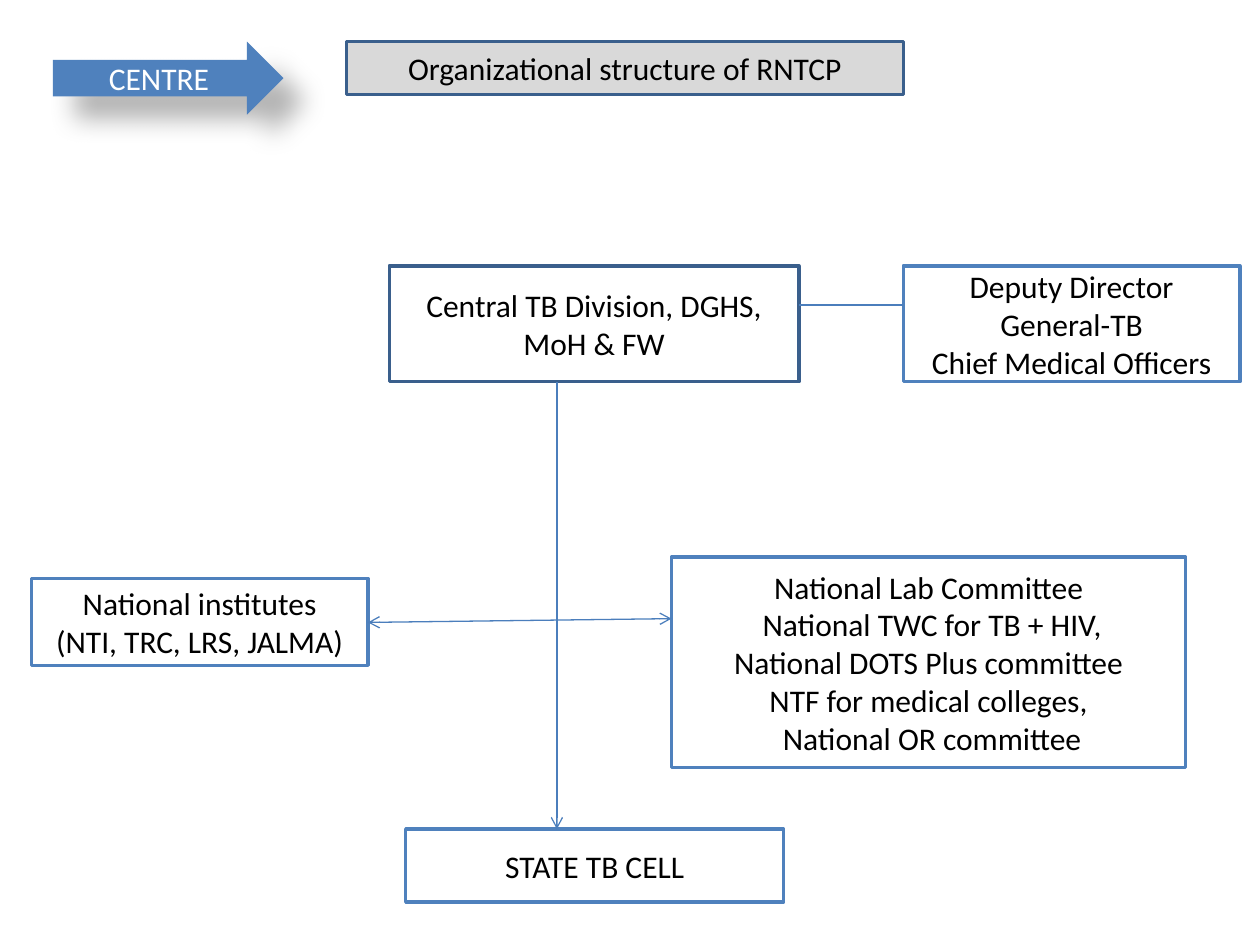
"""Builds the slide on the central organizational structure of RNTCP."""
from lxml import etree
from pptx import Presentation
from pptx.dml.color import RGBColor
from pptx.enum.shapes import MSO_CONNECTOR, MSO_SHAPE
from pptx.enum.text import MSO_ANCHOR, PP_ALIGN
from pptx.oxml import parse_xml
from pptx.oxml.ns import qn
from pptx.util import Inches, Pt

RECTANGLE = MSO_SHAPE.RECTANGLE
RIGHT_ARROW = MSO_SHAPE.RIGHT_ARROW
STRAIGHT = MSO_CONNECTOR.STRAIGHT
MIDDLE = MSO_ANCHOR.MIDDLE
CENTER = PP_ALIGN.CENTER

BLACK = RGBColor(0x00, 0x00, 0x00)
WHITE = RGBColor(0xFF, 0xFF, 0xFF)
GRAY = RGBColor(0xD9, 0xD9, 0xD9)
BLUE = RGBColor(0x4F, 0x81, 0xBD)
DARK_BLUE = RGBColor(0x3A, 0x5F, 0x8C)
LINE_BLUE = RGBColor(0x4B, 0x7E, 0xBC)

SHADOW_XML = (
    '<a:effectLst xmlns:a="http://schemas.openxmlformats.org/drawingml/2006/main">'
    '<a:outerShdw blurRad="190500" dist="228600" dir="2700000" rotWithShape="0">'
    '<a:srgbClr val="000000"><a:alpha val="30000"/></a:srgbClr>'
    '</a:outerShdw></a:effectLst>'
)

presentation = Presentation()
presentation.slide_width = Inches(10)
presentation.slide_height = Inches(7.5)
slide = presentation.slides.add_slide(presentation.slide_layouts[6])


def add_box(text, position, kind=RECTANGLE, fill=None, line=BLUE, color=BLACK):
    shape = slide.shapes.add_shape(kind, *map(Inches, position))
    shape.shadow.inherit = False
    if fill is None:
        shape.fill.background()
    else:
        shape.fill.solid()
        shape.fill.fore_color.rgb = fill
    if line is None:
        shape.line.fill.background()
    else:
        shape.line.color.rgb = line
        shape.line.width = Pt(2)
    frame = shape.text_frame
    frame.word_wrap = True
    frame.vertical_anchor = MIDDLE
    frame.text = text
    for paragraph in frame.paragraphs:
        paragraph.alignment = CENTER
        font = paragraph.runs[0].font
        font.name = "Calibri"
        font.size = Pt(18)
        font.color.rgb = color
    return shape


add_box("Central TB Division, DGHS, MoH & FW", (3.09, 2.11, 3.25, 0.92), line=DARK_BLUE)
add_box("Deputy Director General-TB\nChief Medical Officers", (7.17, 2.11, 2.67, 0.92))
add_box("National institutes\n(NTI, TRC, LRS, JALMA)", (0.25, 4.59, 2.67, 0.69))
add_box(
    "National Lab Committee\n National TWC for TB + HIV,\n"
    " National DOTS Plus committee \nNTF for medical colleges,\n National OR committee",
    (5.33, 4.42, 4.08, 1.67),
)
add_box("Organizational structure of RNTCP", (2.75, 0.33, 4.42, 0.42), fill=GRAY, line=DARK_BLUE)
add_box("STATE TB CELL", (3.22, 6.58, 3, 0.58))

connectors = [
    ((6.34, 2.42, 7.17, 2.42), ()),
    ((2.92, 4.94, 5.33, 4.91), ("a:headEnd", "a:tailEnd")),
    ((4.42, 3.03, 4.42, 6.58), ("a:tailEnd",)),
]
for ends, arrowheads in connectors:
    connector = slide.shapes.add_connector(STRAIGHT, *map(Inches, ends))
    connector.line.color.rgb = LINE_BLUE
    connector.line.width = Pt(0.75)
    properties = connector._element.spPr
    outline = properties.find(qn("a:ln"))
    for arrowhead in arrowheads:
        etree.SubElement(outline, qn(arrowhead), type="arrow")
    etree.SubElement(properties, qn("a:effectLst"))

centre_arrow = add_box(
    "CENTRE", (0.42, 0.33, 1.83, 0.58), kind=RIGHT_ARROW, fill=BLUE, line=None, color=WHITE
)
properties = centre_arrow._element.spPr
properties.replace(properties.find(qn("a:effectLst")), parse_xml(SHADOW_XML))

presentation.save("out.pptx")
